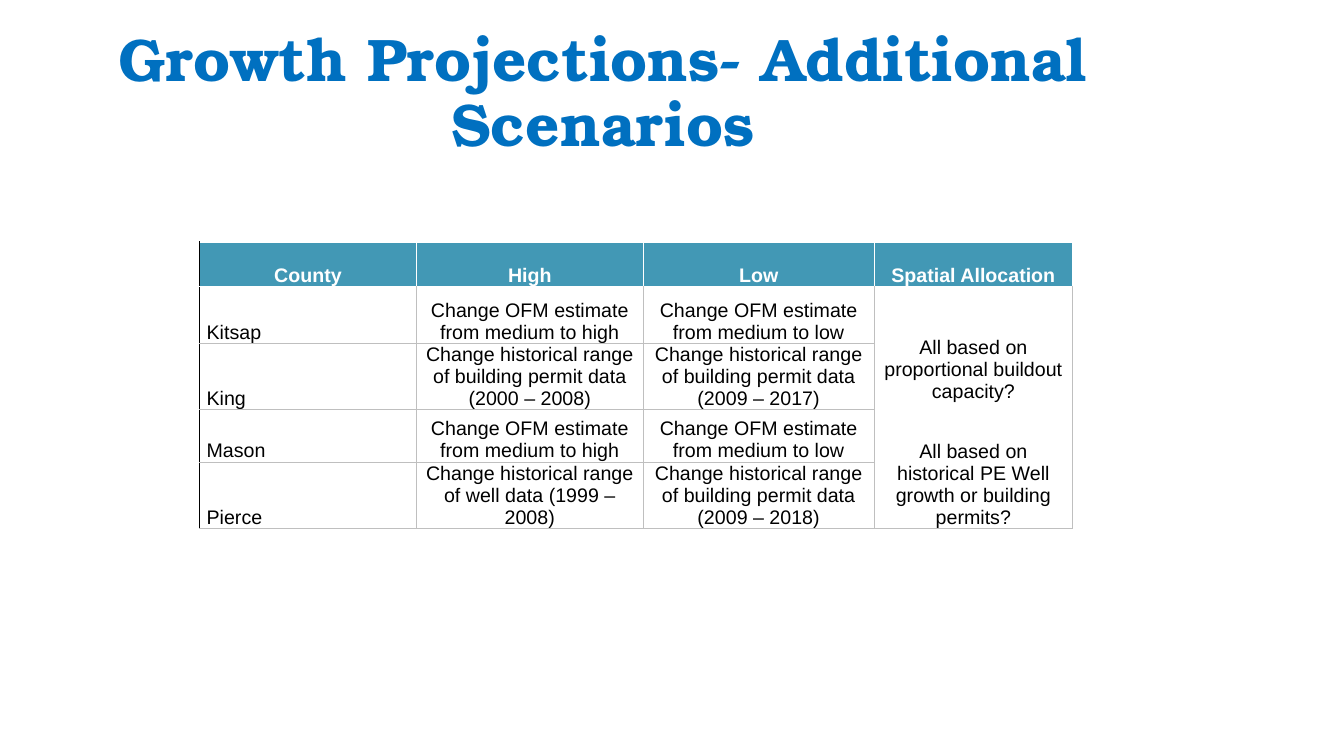
from lxml.etree import SubElement
from pptx import Presentation
from pptx.dml.color import RGBColor
from pptx.enum.text import MSO_ANCHOR, MSO_AUTO_SIZE, PP_ALIGN
from pptx.oxml.ns import qn
from pptx.util import Inches, Pt

BLUE = RGBColor(0x00, 0x70, 0xC0)
TEAL = RGBColor(0x42, 0x98, 0xB5)
GREY = RGBColor(0xBF, 0xBF, 0xBF)
WHITE = RGBColor(0xFF, 0xFF, 0xFF)
BLACK = RGBColor(0x00, 0x00, 0x00)

COL_WIDTHS = [2.15, 2.25, 2.29, 1.97]
ROW_HEIGHTS = [0.44, 0.57, 0.6, 0.52, 0.52]
OFM_HIGH = "Change OFM estimate from medium to high"
OFM_LOW = "Change OFM estimate from medium to low"
PERMITS = "Change historical range of building permit data"
ROWS = [
    ["County", "High", "Low", "Spatial Allocation"],
    ["Kitsap", OFM_HIGH, OFM_LOW,
     "All based on proportional buildout capacity?\n"
     "All based on historical PE Well growth or building permits?"],
    ["King", f"{PERMITS} (2000 – 2008)", f"{PERMITS} (2009 – 2017)", ""],
    ["Mason", OFM_HIGH, OFM_LOW, ""],
    ["Pierce", "Change historical range of well data (1999 – 2008)",
     f"{PERMITS} (2009 – 2018)", ""],
]


def add_title(slide, text, left, top, width, height):
    title = slide.shapes.title
    title.left, title.top = Inches(left), Inches(top)
    title.width, title.height = Inches(width), Inches(height)
    tf = title.text_frame
    tf.text = text
    tf.word_wrap = True
    tf.auto_size = MSO_AUTO_SIZE.NONE
    tf.vertical_anchor = MSO_ANCHOR.MIDDLE
    p = tf.paragraphs[0]
    p.alignment = PP_ALIGN.CENTER
    p.line_spacing = 0.9
    p.font.name, p.font.size, p.font.bold = "TeX Gyre Bonum", Pt(42.9), True
    p.font.color.rgb = BLUE


def set_borders(cell, left, right, top, bottom):
    tc_pr = cell._tc.get_or_add_tcPr()
    for side, color in zip("LRTB", (left, right, top, bottom)):
        ln = SubElement(tc_pr, qn(f"a:ln{side}"), w=str(Pt(1)))
        fill = SubElement(ln, qn("a:solidFill"))
        SubElement(fill, qn("a:srgbClr"), val=str(color))


def format_cell(cell, row, col):
    header = row == 0
    line = WHITE if header else GREY
    set_borders(cell, BLACK if col == 0 else line, line,
                WHITE if row <= 1 else GREY, line)
    if header:
        cell.fill.solid()
        cell.fill.fore_color.rgb = TEAL
    else:
        cell.fill.background()
    cell.vertical_anchor = MSO_ANCHOR.BOTTOM
    cell.margin_left = cell.margin_right = Inches(0.07)
    cell.margin_top = cell.margin_bottom = 0
    for i, p in enumerate(cell.text_frame.paragraphs):
        p.alignment = PP_ALIGN.CENTER if header or col else PP_ALIGN.LEFT
        p.space_before = Pt(24 if i else 3)
        p.space_after = Pt(3)
        p.font.name, p.font.size, p.font.bold = "Arial", Pt(14), header
        p.font.color.rgb = WHITE if header else BLACK


def add_scenario_table(slide, left, top):
    table = slide.shapes.add_table(
        len(ROWS), len(COL_WIDTHS), Inches(left), Inches(top),
        Inches(sum(COL_WIDTHS)), Inches(sum(ROW_HEIGHTS))).table
    table.horz_banding = False
    for column, width in zip(table.columns, COL_WIDTHS):
        column.width = Inches(width)
    for row, height in zip(table.rows, ROW_HEIGHTS):
        row.height = Inches(height)
    for r, texts in enumerate(ROWS):
        for c, text in enumerate(texts):
            cell = table.cell(r, c)
            cell.text = text
            format_cell(cell, r, c)
    table.cell(1, 3).merge(table.cell(4, 3))


def main():
    prs = Presentation()
    prs.slide_width, prs.slide_height = Inches(13.33), Inches(7.5)
    slide = prs.slides.add_slide(prs.slide_layouts[5])
    add_title(slide, "Growth Projections- Additional Scenarios",
              0.23, 0.21, 11.5, 1.45)
    add_scenario_table(slide, 1.98, 2.4)
    prs.save("out.pptx")


if __name__ == "__main__":
    main()
